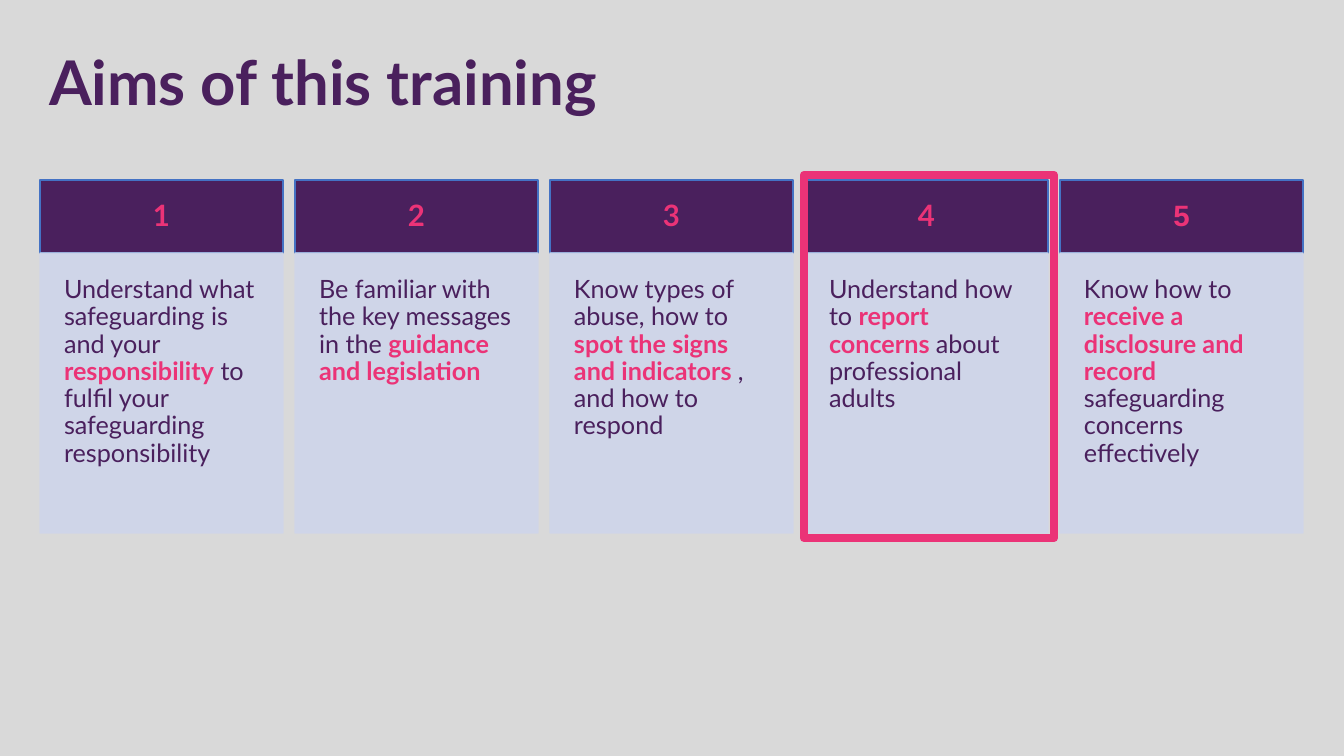
from dataclasses import dataclass

from lxml.etree import SubElement
from pptx import Presentation
from pptx.dml.color import RGBColor as Rgb
from pptx.enum.shapes import MSO_SHAPE as Preset
from pptx.enum.text import MSO_ANCHOR as Anchor, MSO_AUTO_SIZE as AutoSize, PP_ALIGN as Align
from pptx.oxml.ns import qn
from pptx.util import Pt

EMU_PER_PX = 12192000 / 1344


@dataclass(frozen=True)
class Theme:
    background: str = "D9D9D9"
    plum: str = "4A205D"
    pink: str = "EB3377"
    panel: str = "CFD5EA"
    header_line: str = "4472C4"
    panel_opacity: int = 90
    font: str = "Lato"
    title_size: int = 44
    number_size: int = 21
    aim_size: int = 18


THEME = Theme()

# Each aim: number font, then text before, inside and after the highlight
AIMS = [
    (THEME.font, "Understand what safeguarding is and your ", "responsibility",
     " to fulfil your safeguarding responsibility"),
    (THEME.font, "Be familiar with the key messages in the ", "guidance and legislation", ""),
    (THEME.font, "Know types of abuse, how to ", "spot the signs and indicators ",
     ", and how to respond"),
    (THEME.font, "Understand how to ", "report concerns ", "about professional adults"),
    ("Arial", "Know how to ", "receive a disclosure and record ",
     "safeguarding concerns effectively"),
]
CURRENT_AIM = 4


def px(length):
    return round(length * EMU_PER_PX)


def set_all(target, values):
    for attribute, value in values.items():
        setattr(target, attribute, value)


def place(shape, box):
    set_all(shape, dict(zip(("left", "top", "width", "height"), map(px, box))))


def set_opacity(color_format, percent):
    srgb = color_format._xFill.find(qn("a:srgbClr"))
    SubElement(srgb, qn("a:alpha"), val=str(percent * 1000))


def add_rect(slide, box, line, line_width, fill=None, opacity=100):
    rect = slide.shapes.add_shape(Preset.RECTANGLE, *map(px, box))
    rect.shadow.inherit = False
    rect.line.color.rgb = Rgb.from_string(line)
    rect.line.width = Pt(line_width)
    if fill is None:
        rect.fill.background()
        return rect
    rect.fill.solid()
    rect.fill.fore_color.rgb = Rgb.from_string(fill)
    if opacity < 100:
        for color in rect._element.spPr.iter(qn("a:srgbClr")):
            SubElement(color, qn("a:alpha"), val=str(opacity * 1000))
    return rect


def format_frame(frame, inset_x, inset_y, anchor, align, spacing):
    set_all(frame, {
        "word_wrap": True, "auto_size": AutoSize.NONE, "vertical_anchor": anchor,
        "margin_left": px(inset_x), "margin_right": px(inset_x),
        "margin_top": px(inset_y), "margin_bottom": px(inset_y),
    })
    paragraph = frame.paragraphs[0]
    set_all(paragraph, {"alignment": align, "line_spacing": spacing, "space_before": Pt(0)})
    return paragraph


def add_run(paragraph, text, size, color, bold, font=THEME.font):
    run = paragraph.add_run()
    run.text = text
    set_all(run.font, {"name": font, "size": Pt(size), "bold": bold})
    run.font.color.rgb = Rgb.from_string(color)


def add_title(slide, box, text):
    title = slide.shapes.title
    place(title, box)
    paragraph = format_frame(title.text_frame, 10, 5, Anchor.TOP, Align.LEFT, 1.0)
    add_run(paragraph, text, THEME.title_size, THEME.plum, True)


def add_aim_card(slide, box, number, aim):
    left, top, width, height = box
    header_height = 73
    number_font, before, highlight, after = aim

    # Numbered header
    header = add_rect(slide, (left, top, width, header_height), THEME.header_line, 1, THEME.plum)
    paragraph = format_frame(header.text_frame, 19, 19, Anchor.MIDDLE, Align.CENTER, 0.9)
    add_run(paragraph, str(number), THEME.number_size, THEME.pink, True, number_font)

    # Aim text with its highlight
    panel_box = (left, top + header_height, width, height - header_height)
    panel = add_rect(slide, panel_box, THEME.panel, 1, THEME.panel, THEME.panel_opacity)
    paragraph = format_frame(panel.text_frame, 24, 24, Anchor.TOP, Align.LEFT, 0.9)
    for text, color, bold in ((before, THEME.plum, False), (highlight, THEME.pink, True),
                              (after, THEME.plum, False)):
        if text:
            add_run(paragraph, text, THEME.aim_size, color, bold)


def add_aims(slide, box):
    left, top, width, height = box
    gap = 12
    card_width = (width - gap * (len(AIMS) - 1)) // len(AIMS)
    lefts = [left + index * (card_width + gap) for index in range(len(AIMS))]
    for number, (card_left, aim) in enumerate(zip(lefts, AIMS), 1):
        add_aim_card(slide, (card_left, top, card_width, height), number, aim)

    # Frame around the current aim
    frame_box = (lefts[CURRENT_AIM - 1] - 1, top - 5, card_width + 7, height + 10)
    add_rect(slide, frame_box, THEME.pink, 6)


def main():
    deck = Presentation()
    set_all(deck, {"slide_width": px(1344), "slide_height": px(756)})
    slide = deck.slides.add_slide(deck.slide_layouts.get_by_name("Title Only"))
    slide.background.fill.solid()
    slide.background.fill.fore_color.rgb = Rgb.from_string(THEME.background)
    add_title(slide, (39, 39, 1303, 82), "Aims of this training")
    add_aims(slide, (40, 180, 1263, 353))
    deck.save("out.pptx")


if __name__ == "__main__":
    main()
